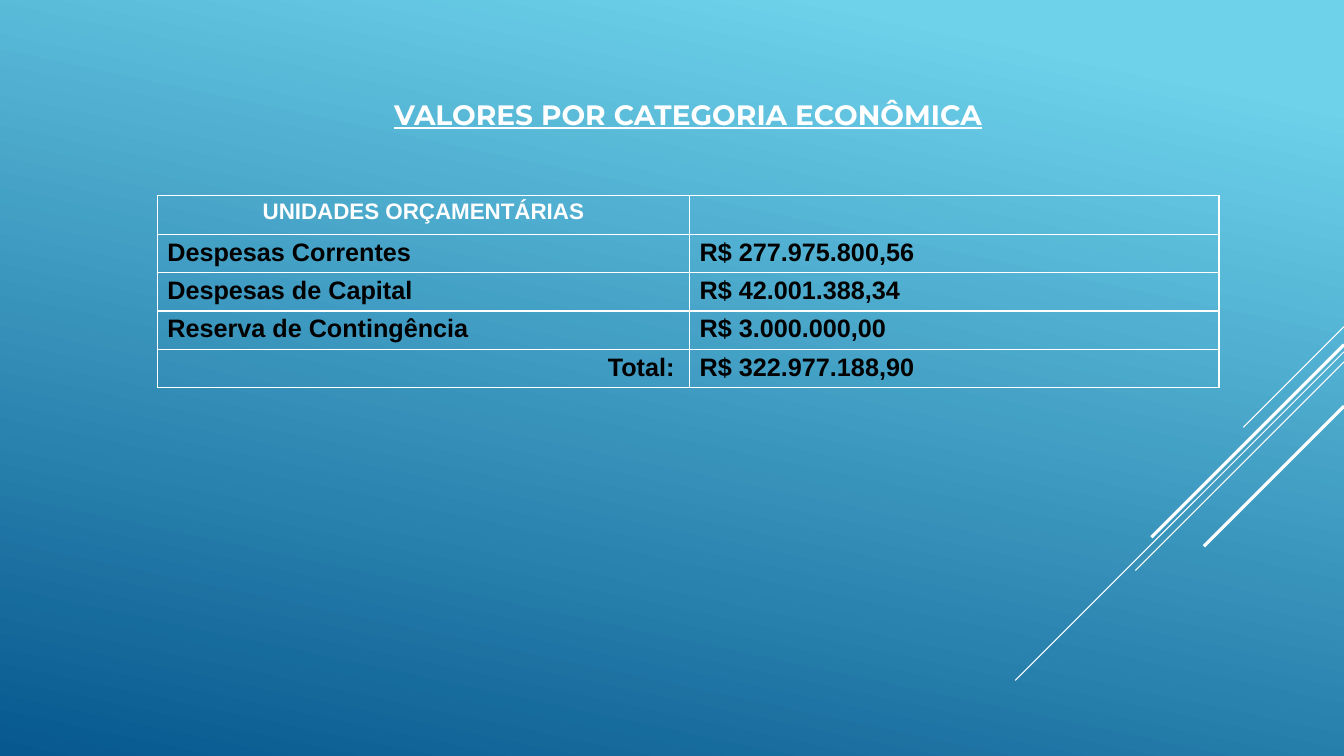
import pptx
import pptx.dml.color
import pptx.enum.shapes
import pptx.enum.text
import pptx.oxml.ns
import pptx.util
from lxml import etree

Inches, Pt = pptx.util.Inches, pptx.util.Pt
PP_ALIGN = pptx.enum.text.PP_ALIGN
MSO_ANCHOR = pptx.enum.text.MSO_ANCHOR
qn = pptx.oxml.ns.qn

WIDTH, HEIGHT = 13.33, 7.5
WHITE, BLACK = "FFFFFF", "000000"
GRADIENT = [(0.1, "6ED2EB"), (1, "06588E")]
GRADIENT_ANGLE = 258

TITLE = "VALORES POR CATEGORIA ECONÔMICA"
ROWS = [
    ("UNIDADES ORÇAMENTÁRIAS", ""),
    ("Despesas Correntes", "R$ 277.975.800,56"),
    ("Despesas de Capital", "R$ 42.001.388,34"),
    ("Reserva de Contingência", "R$ 3.000.000,00"),
    ("Total:", "R$ 322.977.188,90"),
]
LEFT, TABLE_TOP = 1.56, 1.94
COL_WIDTHS = [5.28, 5.25]
ROW_HEIGHT = 0.38

# Diagonals from the right edge: start height, horizontal and vertical run, width in points
DIAGONALS = [
    (3.24, 1, 0.75),
    (3.49, 3.26, 0.75),
    (3.59, 2.07, 0.75),
    (3.42, 1.91, 2.25),
    (4.03, 1.39, 2.25),
]


def rgb(color):
    return pptx.dml.color.RGBColor.from_string(color)


def format_runs(p, font, size, color):
    for r in p.runs:
        r.font.name = font
        r.font.size = Pt(size)
        r.font.bold = True
        r.font.color.rgb = rgb(color)


def add_diagonal(s, top, run, width):
    line = s.shapes.add_connector(
        pptx.enum.shapes.MSO_CONNECTOR.STRAIGHT,
        Inches(WIDTH), Inches(top), Inches(WIDTH - run), Inches(top + run))
    line.line.color.rgb = rgb(WHITE)
    line.line.width = Pt(width)
    etree.SubElement(line._element.spPr, qn("a:effectLst"))


def set_borders(cell, color, width):
    tc_pr = cell._tc.get_or_add_tcPr()
    for side in ("lnL", "lnR", "lnT", "lnB"):
        ln = etree.SubElement(tc_pr, qn("a:" + side), w=str(Pt(width)))
        fill = etree.SubElement(ln, qn("a:solidFill"))
        etree.SubElement(fill, qn("a:srgbClr"), val=color)


def add_title(s):
    title = s.shapes.title
    title.left, title.top = Inches(LEFT), Inches(0.32)
    title.width, title.height = Inches(sum(COL_WIDTHS)), Inches(1.62)
    tf = title.text_frame
    tf.text = TITLE
    tf.vertical_anchor = MSO_ANCHOR.MIDDLE
    p = tf.paragraphs[0]
    p.alignment = PP_ALIGN.CENTER
    format_runs(p, "Montserrat", 20, WHITE)
    p.runs[0].font.underline = True


def add_budget_table(s):
    table = s.shapes.add_table(
        len(ROWS), len(COL_WIDTHS), Inches(LEFT), Inches(TABLE_TOP),
        Inches(sum(COL_WIDTHS)), Inches(ROW_HEIGHT * len(ROWS))).table
    table.first_row = table.horz_banding = False
    for column, width in zip(table.columns, COL_WIDTHS):
        column.width = Inches(width)
    for i, row in enumerate(ROWS):
        table.rows[i].height = Inches(ROW_HEIGHT)
        for j, text in enumerate(row):
            cell = table.cell(i, j)
            set_borders(cell, WHITE, 1)
            cell.fill.background()
            cell.margin_top = cell.margin_bottom = Inches(0.04)
            cell.text = text
            p = cell.text_frame.paragraphs[0]
            if i == 0:
                p.alignment = PP_ALIGN.CENTER
                format_runs(p, "Arial", 16, WHITE)
            else:
                format_runs(p, "Arial", 18, BLACK)
    total = table.cell(len(ROWS) - 1, 0)
    total.margin_right = Inches(0.15)
    total.text_frame.paragraphs[0].alignment = PP_ALIGN.RIGHT


def main():
    prs = pptx.Presentation()
    prs.slide_width, prs.slide_height = Inches(WIDTH), Inches(HEIGHT)
    s = prs.slides.add_slide(prs.slide_layouts[5])
    fill = s.background.fill
    fill.gradient()
    fill.gradient_angle = GRADIENT_ANGLE
    for stop, (position, color) in zip(fill.gradient_stops, GRADIENT):
        stop.position = position
        stop.color.rgb = rgb(color)
    for diagonal in DIAGONALS:
        add_diagonal(s, *diagonal)
    add_title(s)
    add_budget_table(s)
    prs.save("out.pptx")


if __name__ == "__main__":
    main()
